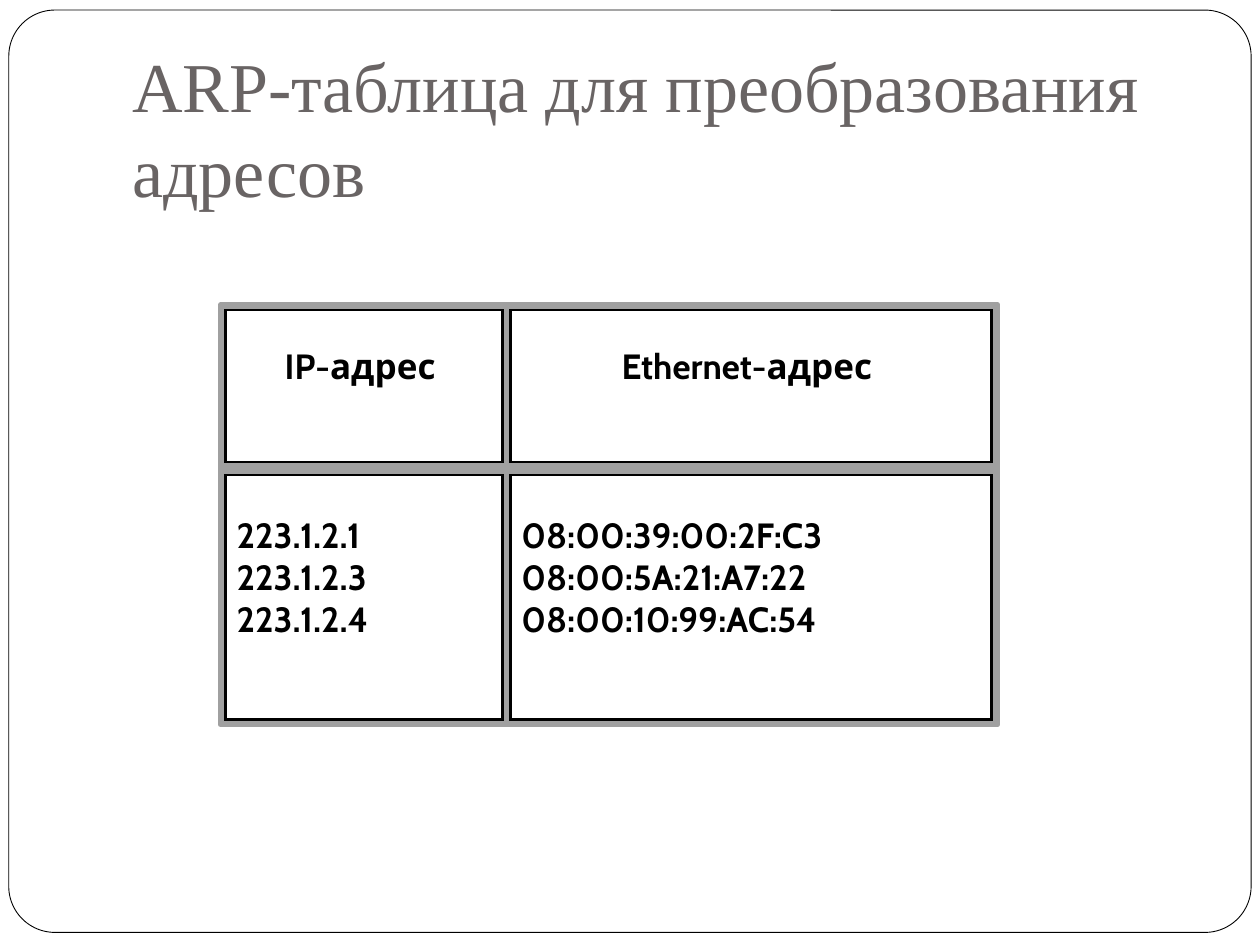
from pptx import Presentation
from pptx.dml.color import RGBColor
from pptx.enum.shapes import MSO_SHAPE
from pptx.enum.text import MSO_ANCHOR, MSO_AUTO_SIZE, PP_ALIGN
from pptx.util import Inches, Pt

COLS = [(1.76, 2.26), (4.02, 3.88)]
ROWS = [(2.43, 1.27), (3.74, 2)]
CELLS = [
    [["IP-адрес "], ["Ethernet-адрес "]],
    [["223.1.2.1", "223.1.2.3", "223.1.2.4"],
     ["08:00:39:00:2F:C3", "08:00:5A:21:A7:22", "08:00:10:99:AC:54"]],
]


def paint(color, hue):
    """Set a colour from a hex string."""
    color.rgb = RGBColor.from_string(hue)


def add_box(shapes, box, hue, width, fill=None, kind=MSO_SHAPE.RECTANGLE):
    """Add an outlined shape, filled only when a fill is given."""
    shape = shapes.add_shape(kind, *map(Inches, box))
    shape.shadow.inherit = False
    if fill:
        shape.fill.solid()
        paint(shape.fill.fore_color, fill)
    else:
        shape.fill.background()
    paint(shape.line.color, hue)
    shape.line.width = Pt(width)
    return shape


def add_run(para, text, font, size, hue, bold=False):
    """Add one styled run."""
    run = para.add_run()
    run.text = text
    run.font.name, run.font.size, run.font.bold = font, Pt(size), bold
    paint(run.font.color, hue)


def set_frame(frame, anchor, bottom):
    """Set the anchor, wrapping and insets of a text frame."""
    frame.word_wrap = True
    frame.auto_size = MSO_AUTO_SIZE.NONE
    frame.vertical_anchor = anchor
    frame.margin_left = frame.margin_right = Inches(0.1)
    frame.margin_top, frame.margin_bottom = Inches(0.05), Inches(bottom)


def add_title(slide, text):
    """Place and style the title."""
    title = slide.shapes.title
    title.left, title.top = Inches(0.95), Inches(0.21)
    title.width, title.height = Inches(8.93), Inches(1.57)
    set_frame(title.text_frame, MSO_ANCHOR.BOTTOM, 0.1)
    para = title.text_frame.paragraphs[0]
    para.alignment = PP_ALIGN.LEFT
    para.line_spacing = Pt(48.6)
    add_run(para, text, "Times New Roman", 40, "696464")
    return title


def add_cell(shapes, box, lines, align):
    """Add a black text box inside a grey border."""
    left, top, width, height = box
    inner = (left + 0.02, top + 0.02, width - 0.04, height - 0.04)
    cell = add_box(shapes, inner, "000000", 3)
    set_frame(cell.text_frame, MSO_ANCHOR.MIDDLE, 0.38)
    para = cell.text_frame.paragraphs[0]
    para.alignment = align
    for i, line in enumerate(lines):
        if i:
            para.add_line_break()
        add_run(para, line, "Cabin", 20, "000000", True)
    add_box(shapes, box, "A0A0A0", 3)


def add_grid(slide):
    """Add the grouped grid of address cells."""
    shapes = slide.shapes.add_group_shape().shapes
    aligns = [PP_ALIGN.CENTER, PP_ALIGN.LEFT]
    for (top, height), row, align in zip(ROWS, CELLS, aligns):
        for (left, width), lines in zip(COLS, row):
            add_cell(shapes, (left, top, width, height), lines, align)
    add_box(shapes, (1.75, 2.42, 6.17, 3.33), "A0A0A0", 3)


def main():
    """Build and save the slide."""
    deck = Presentation()
    deck.slide_width, deck.slide_height = Inches(10), Inches(7.5)
    slide = deck.slides.add_slide(deck.slide_layouts[5])
    title = add_title(slide, "ARP-таблица для преобразования адресов")
    panel = add_box(slide.shapes, (0.07, 0.08, 9.86, 7.32), "000000", 0.5,
                    "FFFFFF", MSO_SHAPE.ROUNDED_RECTANGLE)
    panel.adjustments[0] = 0.05
    title.element.addprevious(panel.element)
    add_grid(slide)
    deck.save("out.pptx")


if __name__ == "__main__":
    main()
